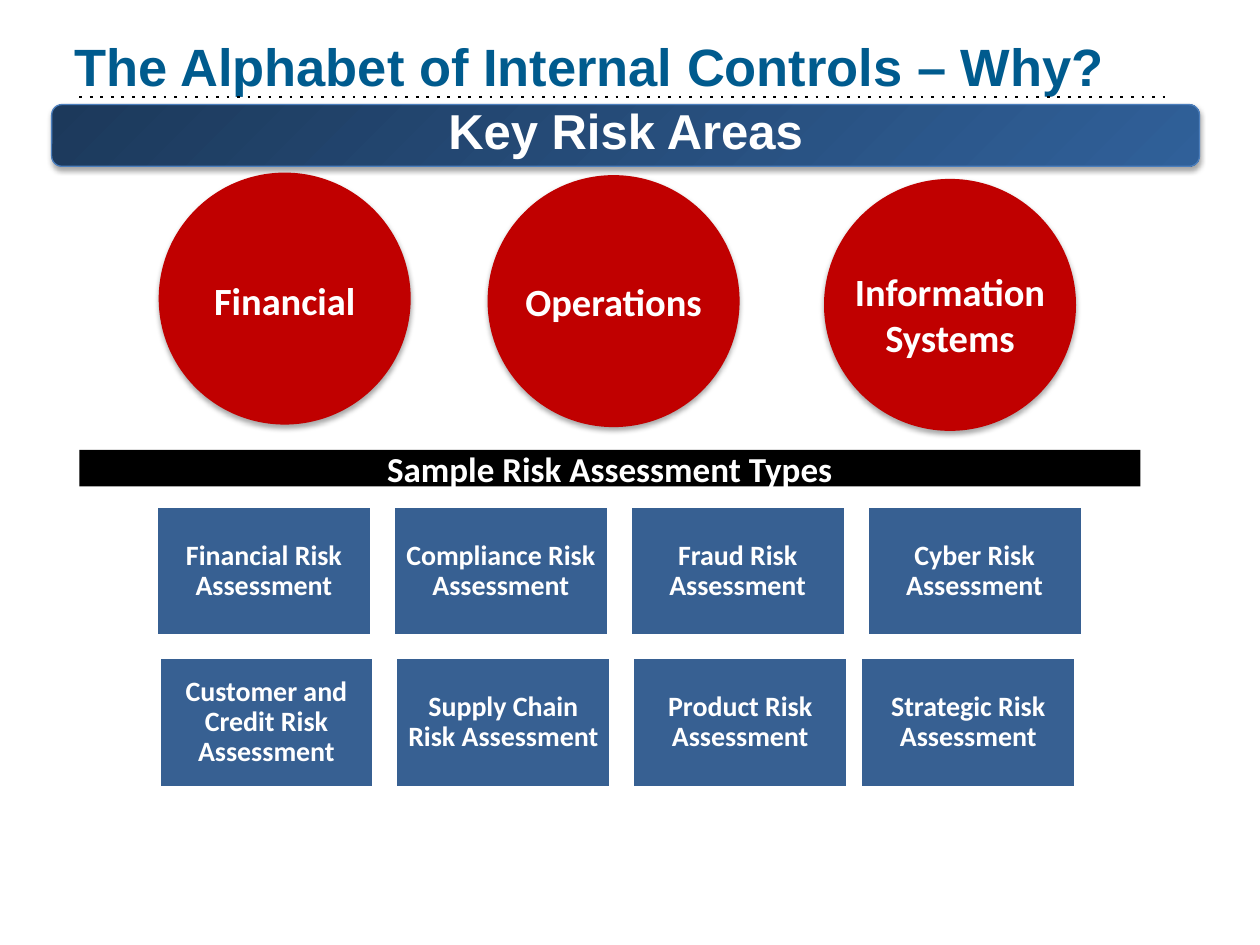
from dataclasses import dataclass

from lxml import etree
from pptx import Presentation
from pptx.dml.color import RGBColor
from pptx.enum.dml import MSO_LINE
from pptx.enum.shapes import MSO_CONNECTOR, MSO_SHAPE
from pptx.enum.text import MSO_ANCHOR, MSO_AUTO_SIZE, PP_ALIGN
from pptx.oxml.ns import qn
from pptx.util import Inches, Pt

RECT, ROUND_RECT, OVAL = MSO_SHAPE.RECTANGLE, MSO_SHAPE.ROUNDED_RECTANGLE, MSO_SHAPE.OVAL
TOP, MIDDLE = MSO_ANCHOR.TOP, MSO_ANCHOR.MIDDLE
LEFT, CENTER = PP_ALIGN.LEFT, PP_ALIGN.CENTER
STRAIGHT = MSO_CONNECTOR.STRAIGHT
ROUND_DOT = MSO_LINE.ROUND_DOT
NO_FIT = MSO_AUTO_SIZE.NONE

WIDTH, HEIGHT = Inches(10), Inches(7.5)
COL, ROW = WIDTH / 100, HEIGHT / 75


@dataclass(frozen=True)
class Theme:
    """Colours, fonts and type sizes of the slide."""
    title: str = "005B8E"
    white: str = "FFFFFF"
    black: str = "000000"
    circle: str = "C00000"
    card: str = "376092"
    banner_start: str = "1C395B"
    banner_end: str = "306099"
    banner_line: str = "4B7EBC"
    head_font: str = "Arial"
    body_font: str = "Calibri"
    title_size: int = 30
    banner_size: int = 28
    circle_size: int = 22
    strip_size: int = 20
    card_size: int = 16


THEME = Theme()


@dataclass(frozen=True)
class Box:
    """A rectangle in grid columns and rows."""
    x: float
    y: float
    w: float
    h: float

    def emu(self):
        """Return left, top, width and height in EMU."""
        return round(self.x * COL), round(self.y * ROW), round(self.w * COL), round(self.h * ROW)


def rgb(value):
    """Turn a hex string into a colour."""
    return RGBColor.from_string(value)


def write(shape, text, size, font=THEME.body_font, color=THEME.white,
          align=CENTER, anchor=MIDDLE, spacing=1.0, inset=None):
    """Put one bold run of text into a shape."""
    tf = shape.text_frame
    tf.word_wrap = True
    tf.auto_size = NO_FIT
    tf.vertical_anchor = anchor
    side, edge = (0.1, 0.05) if inset is None else (inset, inset)
    tf.margin_left = tf.margin_right = Inches(side)
    tf.margin_top = tf.margin_bottom = Inches(edge)
    p = tf.paragraphs[0]
    p.alignment = align
    p.line_spacing = spacing
    r = p.add_run()
    r.text = text
    r.font.name = font
    r.font.size = Pt(size)
    r.font.bold = True
    r.font.color.rgb = rgb(color)


def add_block(s, kind, box, fill, line=None, line_width=1):
    """Add a flat filled shape with an optional outline."""
    sp = s.shapes.add_shape(kind, *box.emu())
    sp.shadow.inherit = False
    sp.fill.solid()
    sp.fill.fore_color.rgb = rgb(fill)
    if line:
        sp.line.color.rgb = rgb(line)
        sp.line.width = Pt(line_width)
    else:
        sp.line.fill.background()
    return sp


def add_shadow(sp):
    """Give a flat shape a soft shadow below it."""
    effects = sp.element.spPr.find(qn("a:effectLst"))
    shadow = etree.SubElement(effects, qn("a:outerShdw"), blurRad=str(Pt(3.1)),
                              dist=str(Pt(1.8)), dir="5400000", rotWithShape="0")
    color = etree.SubElement(shadow, qn("a:srgbClr"), val=THEME.black)
    etree.SubElement(color, qn("a:alpha"), val="35000")


def add_title(s, box, text):
    """Place the slide title and the dotted rule below it."""
    title = s.shapes.title
    title.left, title.top, title.width, title.height = box.emu()
    write(title, text, THEME.title_size, THEME.head_font, THEME.title, LEFT, TOP, 0.8)
    left, top, width, _ = Box(box.x + 1.4, box.y + 4.5, box.w + 0.3, 0).emu()
    rule = s.shapes.add_connector(STRAIGHT, left, top, left + width, top)
    rule.line.color.rgb = rgb(THEME.black)
    rule.line.width = Pt(1.5)
    rule.line.dash_style = ROUND_DOT
    spPr = rule.element.spPr
    spPr.find(qn("a:ln")).find(qn("a:prstDash")).set("val", "dot")
    etree.SubElement(spPr, qn("a:effectLst"))


def add_banner(s, box, text):
    """Add the gradient heading bar."""
    sp = add_block(s, ROUND_RECT, box, THEME.banner_start, THEME.banner_line, 0.75)
    sp.fill.gradient()
    sp.fill.gradient_angle = 315
    for stop, color in zip(sp.fill.gradient_stops, (THEME.banner_start, THEME.banner_end)):
        stop.color.rgb = rgb(color)
    add_shadow(sp)
    write(sp, text, THEME.banner_size, THEME.head_font, spacing=0.8)


def add_circle(s, box, text, drop):
    """Add a risk area circle with its label lowered by drop rows."""
    add_shadow(add_block(s, OVAL, box, THEME.circle))
    label = s.shapes.add_textbox(*Box(box.x + 1, box.y + 5.8 + drop, box.w - 2, 8.4).emu())
    write(label, text, THEME.circle_size)


def add_strip(s, box, text):
    """Add the black heading strip."""
    write(add_block(s, RECT, box, THEME.black), text, THEME.strip_size)


def add_card_row(s, box, pitch, names):
    """Add equal cards from the first card's box at a fixed pitch."""
    for i, name in enumerate(names):
        cell = Box(box.x + i * pitch, box.y, box.w, box.h)
        sp = add_block(s, RECT, cell, THEME.card, THEME.white, 2)
        write(sp, name, THEME.card_size, spacing=0.9, inset=0.07)


def build_slide(prs):
    """Lay out the risk areas slide."""
    s = prs.slides.add_slide(prs.slide_layouts[5])
    add_title(s, Box(4.9, 3.2, 86.3, 5.1), "The Alphabet of Internal Controls – Why?")
    add_banner(s, Box(4.1, 8.3, 91.1, 4.9), "Key Risk Areas")
    for x, y, name, drop in ((12.6, 13.7, "Financial", 0.1),
                             (38.7, 13.9, "Operations", 0),
                             (65.4, 14.2, "Information Systems", 0.7)):
        add_circle(s, Box(x, y, 20, 20), name, drop)
    add_strip(s, Box(6.3, 35.7, 84.2, 2.9), "Sample Risk Assessment Types")
    for x, y, names in (
            (12.4, 40.2, ("Financial Risk", "Compliance Risk", "Fraud Risk", "Cyber Risk")),
            (12.6, 52.2, ("Customer and Credit Risk", "Supply Chain Risk", "Product Risk")),
            (68.3, 52.2, ("Strategic Risk",))):
        add_card_row(s, Box(x, y, 17.1, 10.3), 18.8, [f"{name} Assessment" for name in names])


def main():
    """Build and save the presentation."""
    prs = Presentation()
    prs.slide_width, prs.slide_height = WIDTH, HEIGHT
    build_slide(prs)
    prs.save("out.pptx")


if __name__ == "__main__":
    main()
